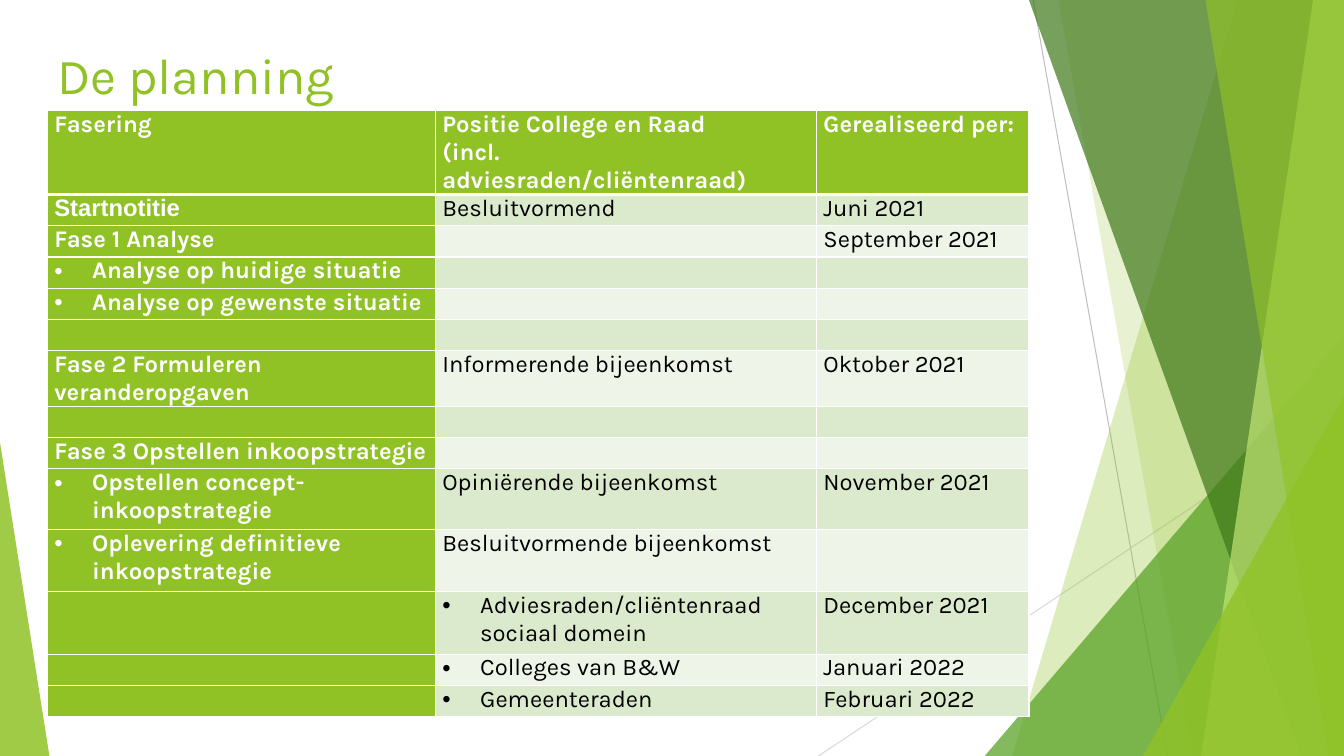
from dataclasses import dataclass

from lxml import etree
from pptx import Presentation
from pptx.dml.color import RGBColor
from pptx.enum.shapes import MSO_CONNECTOR, MSO_SHAPE
from pptx.enum.text import MSO_ANCHOR, PP_ALIGN
from pptx.oxml.ns import qn
from pptx.util import Pt

STRAIGHT = MSO_CONNECTOR.STRAIGHT
TRIANGLE = MSO_SHAPE.ISOSCELES_TRIANGLE
BOTTOM = MSO_ANCHOR.BOTTOM
LEFT = PP_ALIGN.LEFT


@dataclass(frozen=True)
class Theme:
    green: str = "90C226"
    mid_green: str = "54A021"
    dark_green: str = "3F7819"
    light_green: str = "C0E474"
    band_dark: str = "DBE9CD"
    band_light: str = "EEF4E8"
    white: str = "FFFFFF"
    black: str = "000000"
    line_gray: str = "BFBFBF"
    pale_gray: str = "D9D9D9"
    font: str = "Karla"
    startnote_font: str = "Arial"
    title_size: int = 36
    table_size: int = 17


THEME = Theme()
WIDTH, HEIGHT = 960, 540


def paint(shape, color, opacity):
    """Give a shape a translucent fill without outline or shadow."""
    shape.shadow.inherit = False
    shape.line.fill.background()
    shape.fill.solid()
    shape.fill.fore_color.rgb = RGBColor.from_string(color)
    color_element = shape._element.spPr.find(qn("a:solidFill"))[0]
    etree.SubElement(color_element, qn("a:alpha"), val=str(opacity * 1000))


def add_border(cell, side, position, width):
    """Insert a white border line at its place in the cell properties."""
    border = etree.Element(qn(f"a:ln{side}"), w=str(Pt(width)))
    fill = etree.SubElement(border, qn("a:solidFill"))
    etree.SubElement(fill, qn("a:srgbClr"), val=THEME.white)
    cell._tc.get_or_add_tcPr().insert(position, border)


presentation = Presentation()
presentation.slide_width = Pt(WIDTH)
presentation.slide_height = Pt(HEIGHT)
slide = presentation.slides.add_slide(presentation.slide_layouts[5])
shapes = slide.shapes

# Title
title = shapes.title
title.left, title.top, title.width, title.height = Pt(33.8), Pt(26.6), Pt(676.8), Pt(51.8)
title.text_frame.text = "De planning"
title.text_frame.vertical_anchor = BOTTOM
title_paragraph = title.text_frame.paragraphs[0]
title_paragraph.alignment = LEFT
title_font = title_paragraph.runs[0].font
title_font.name = THEME.font
title_font.size = Pt(THEME.title_size)
title_font.color.rgb = RGBColor.from_string(THEME.green)

# Thin lines behind the facets
for x1, y1, x2, y2, color in [
    (738, 0, 834, HEIGHT, THEME.line_gray),
    (WIDTH, 290, 584.6, HEIGHT, THEME.pale_gray),
]:
    line = shapes.add_connector(STRAIGHT, Pt(x1), Pt(y1), Pt(x2), Pt(y2))
    line.line.width = Pt(0.75)
    line.line.color.rgb = RGBColor.from_string(color)
    etree.SubElement(line._element.spPr, qn("a:effectLst"))

# Facets: bands reach the right edge (top x, bottom x), triangles have a box and apex
bands_behind = [(884, 723, THEME.green, 30), (756, 852, THEME.green, 20)]
bands_front = [
    (735, 929.5, THEME.dark_green, 70),
    (938, 858, THEME.light_green, 70),
    (861, 949, THEME.green, 65),
]
large_triangle = [(703.4, 239.8, 256.6, 300.2, 1, THEME.mid_green, 72)]
edge_triangles = [
    (816.5, 283, 143.5, 257, 1, THEME.green, 80),
    (0, 316, 35.3, 224, 0, THEME.green, 85),
]
for bands, triangles in [(bands_behind, large_triangle), (bands_front, edge_triangles)]:
    for top_x, bottom_x, color, opacity in bands:
        builder = shapes.build_freeform(Pt(top_x), Pt(0))
        corners = [(WIDTH, 0), (WIDTH, HEIGHT), (bottom_x, HEIGHT)]
        builder.add_line_segments([(Pt(x), Pt(y)) for x, y in corners], close=True)
        paint(builder.convert_to_shape(), color, opacity)
    for left, top, width, height, apex, color, opacity in triangles:
        triangle = shapes.add_shape(TRIANGLE, Pt(left), Pt(top), Pt(width), Pt(height))
        triangle.adjustments[0] = apex
        paint(triangle, color, opacity)

# Planning table: height and three cells per row; a leading bullet marks a list item
BULLET = "•"
ROW = 22.3
planning = [
    (44.6, "Fasering", "Positie College en Raad\n(incl. adviesraden/cliëntenraad)", "Gerealiseerd per:"),
    (ROW, "Startnotitie", "Besluitvormend", "Juni 2021"),
    (ROW, "Fase 1 Analyse", "", "September 2021"),
    (ROW, "•Analyse op huidige situatie", "", ""),
    (ROW, "•Analyse op gewenste situatie", "", ""),
    (ROW, "", "", ""),
    (ROW, "Fase 2 Formuleren veranderopgaven", "Informerende bijeenkomst", "Oktober 2021"),
    (ROW, "", "", ""),
    (ROW, "Fase 3 Opstellen inkoopstrategie", "", ""),
    (43.2, "•Opstellen concept-inkoopstrategie", "Opiniërende bijeenkomst", "November 2021"),
    (44.6, "•Oplevering definitieve inkoopstrategie", "Besluitvormende bijeenkomst", ""),
    (44.6, "", "•Adviesraden/cliëntenraad sociaal domein", "December 2021"),
    (ROW, "", "•Colleges van B&W", "Januari 2022"),
    (ROW, "", "•Gemeenteraden", "Februari 2022"),
]
column_widths = [277.2, 272.2, 151.9]
table = shapes.add_table(
    len(planning), len(column_widths), Pt(33.8), Pt(79.2),
    Pt(sum(column_widths)), Pt(sum(row[0] for row in planning)),
).table
table.first_col = True
for column, width in zip(table.columns, column_widths):
    column.width = Pt(width)

for row_index, (height, *texts) in enumerate(planning):
    table.rows[row_index].height = Pt(height)
    for column_index, text in enumerate(texts):
        cell = table.cell(row_index, column_index)
        is_heading = row_index == 0 or column_index == 0
        band = THEME.band_dark if row_index % 2 else THEME.band_light
        cell.fill.solid()
        cell.fill.fore_color.rgb = RGBColor.from_string(THEME.green if is_heading else band)
        cell.margin_left = cell.margin_right = Pt(5)
        cell.margin_top = cell.margin_bottom = Pt(0)
        for position, side in enumerate("LRTB"):
            thick = (row_index, side) in [(0, "B"), (1, "T")]
            add_border(cell, side, position, 3 if thick else 1)

        cell.text_frame.text = text.removeprefix(BULLET)
        for paragraph in cell.text_frame.paragraphs:
            if text.startswith(BULLET):
                properties = paragraph._p.get_or_add_pPr()
                properties.set("marL", str(Pt(27)))
                properties.set("indent", str(Pt(-27)))
                etree.SubElement(properties, qn("a:buFont"), typeface="Arial")
                etree.SubElement(properties, qn("a:buChar"), char=BULLET)
            for run in paragraph.runs:
                run.font.name = THEME.startnote_font if text == "Startnotitie" else THEME.font
                run.font.size = Pt(THEME.table_size)
                run.font.bold = is_heading
                run.font.color.rgb = RGBColor.from_string(THEME.white if is_heading else THEME.black)

presentation.save("out.pptx")
